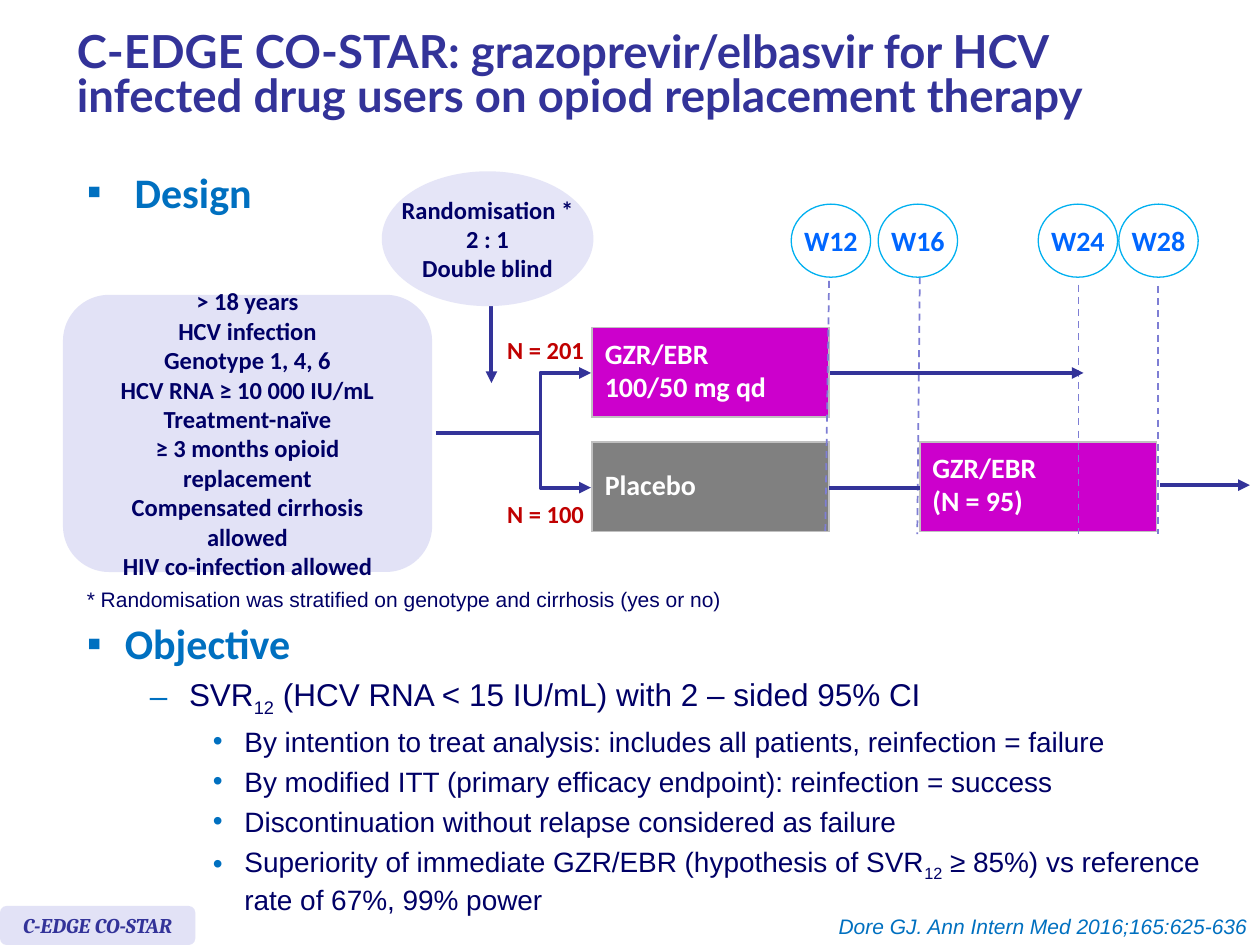
"""Build the C-EDGE CO-STAR study design slide."""
from pptx import Presentation
from pptx.dml.color import RGBColor
from pptx.enum import dml, shapes, text
from pptx.oxml import parse_xml
from pptx.oxml.ns import nsdecls
from pptx.util import Inches, Pt

NAVY = RGBColor(0x00, 0x00, 0x66)
INDIGO = RGBColor(0x33, 0x33, 0x99)
BLUE = RGBColor(0x00, 0x70, 0xC0)
BRIGHT = RGBColor(0x00, 0x66, 0xFF)
CYAN = RGBColor(0x00, 0xB0, 0xF0)
DASH = RGBColor(0x7E, 0x7E, 0xD4)
PALE = RGBColor(0xE2, 0xE2, 0xF6)
MIST = RGBColor(0xE5, 0xE5, 0xF7)
RED = RGBColor(0xC0, 0x00, 0x00)
PINK = RGBColor(0xCC, 0x00, 0xCC)
GREY = RGBColor(0x80, 0x80, 0x80)
WHITE = RGBColor(0xFF, 0xFF, 0xFF)
LEFT, MID, RIGHT = text.PP_ALIGN.LEFT, text.PP_ALIGN.CENTER, text.PP_ALIGN.RIGHT
OVAL, ROUND = shapes.MSO_SHAPE.OVAL, shapes.MSO_SHAPE.ROUNDED_RECTANGLE


def write(frame, words, face, size, color, align=MID, bold=True, slant=False):
    """Fill a text frame and format every paragraph alike."""
    frame.text = words
    for para in frame.paragraphs:
        para.alignment = align
        for run in para.runs:
            font = run.font
            font.name, font.size, font.bold, font.italic = face, Pt(size), bold, slant
            font.color.rgb = color


def style(item, color, width, ends=()):
    """Colour a line and add triangles at the named ends."""
    item.line.color.rgb = color
    item.line.width = Pt(width)
    for end in ends:
        item.line._get_or_add_ln().append(
            parse_xml(f'<a:{end} {nsdecls("a")} type="triangle"/>'))


deck = Presentation()
deck.slide_width, deck.slide_height = Inches(10), Inches(7.5)
slide = deck.slides.add_slide(deck.slide_layouts[1])
pool = slide.shapes
title, body = pool.title, slide.placeholders[1]

title.left, title.top, title.width, title.height = map(Inches, (0.51, 0.08, 9.13, 1.07))
write(title.text_frame, "C-EDGE CO-STAR: grazoprevir/elbasvir for HCV infected drug users "
      "on opiod replacement therapy", "Lato", 26, INDIGO, LEFT)
title.text_frame.paragraphs[0].line_spacing = Pt(25)
title.text_frame.vertical_anchor = text.MSO_ANCHOR.MIDDLE
title.text_frame.auto_size = text.MSO_AUTO_SIZE.NONE

ARMS = [
    (4.7, 2.6, "GZR/EBR\n100/50 mg qd", PINK),
    (4.7, 3.51, "Placebo", GREY),
    (7.3, 3.51, "GZR/EBR\n(N = 95)", PINK),
]
for x, y, words, color in ARMS:
    table = pool.add_table(1, 1, Inches(x), Inches(y), Inches(1.88), Inches(0.71)).table
    cell = table.cell(0, 0)
    write(cell.text_frame, words, "Calibri", 16, WHITE, LEFT)
    cell.vertical_anchor = text.MSO_ANCHOR.MIDDLE
    for i, para in enumerate(cell.text_frame.paragraphs):
        para.line_spacing = 0.8
        para.space_before = Pt(3.2 if i else 0)
    for side in "LRTB":
        cell._tc.get_or_add_tcPr().append(parse_xml(
            f'<a:ln{side} {nsdecls("a")} w="12700"><a:solidFill>'
            f'<a:srgbClr val="C0C0C0"/></a:solidFill></a:ln{side}>'))
    cell.fill.solid()
    cell.fill.fore_color.rgb = color

LINES = [
    (6.58, 2.23, 6.55, 4.22, "dash"),
    (7.3, 2.2, 7.28, 4.24, "dash"),
    (8.56, 2.26, 8.56, 4.24, "dash"),
    (9.19, 2.27, 9.19, 4.24, "dash"),
    (6.59, 2.96, 8.6, 2.96, "arrow"),
    (9.21, 3.85, 9.92, 3.85, "arrow"),
    (3.9, 2.42, 3.9, 3.04, "arrow"),
    (6.58, 3.87, 7.3, 3.87, "plain"),
    (3.46, 3.44, 4.29, 3.44, "plain"),
]
for *ends, kind in LINES:
    line = pool.add_connector(shapes.MSO_CONNECTOR.STRAIGHT, *map(Inches, ends))
    if kind == "dash":
        style(line, DASH, 1)
        line.line.dash_style = dml.MSO_LINE.DASH
    else:
        style(line, INDIGO, 2.25, ["tailEnd"] if kind == "arrow" else [])
    line._element.spPr.append(parse_xml(f'<a:effectLst {nsdecls("a")}/>'))

pen = pool.build_freeform(Inches(4.69), Inches(2.96))
pen.add_line_segments([(Inches(x), Inches(y)) for x, y in
                       ((4.29, 2.96), (4.29, 3.87), (4.69, 3.87))], close=False)
fork = pen.convert_to_shape()
fork.shadow.inherit = False
fork.fill.background()
style(fork, INDIGO, 2.25, ["headEnd", "tailEnd"])

WHO = """> 18 years
HCV infection
Genotype 1, 4, 6
HCV RNA ≥ 10 000 IU/mL
Treatment-naïve
≥\u00a03 months opioid replacement
Compensated cirrhosis allowed
HIV co-infection allowed""".replace("\u00a0", " ")
NODES = [
    (ROUND, (0.5, 2.34, 2.93, 2.2), PALE, WHO, "Calibri", 14, NAVY),
    (OVAL, (3.03, 1.36, 1.68, 1.07), MIST, "Randomisation *\n2 : 1\nDouble blind",
     "Calibri", 14, NAVY),
    (ROUND, (0, 7.19, 1.55, 0.31), PALE, "C-EDGE CO-STAR", "Cambria", 12, INDIGO),
]
for x, week in ((6.28, "W12"), (6.97, "W16"), (8.24, "W24"), (8.88, "W28")):
    NODES.append((OVAL, (x, 1.62, 0.63, 0.58), WHITE, week, "Calibri", 16, BRIGHT))
for kind, spot, color, words, face, size, ink in NODES:
    node = pool.add_shape(kind, *map(Inches, spot))
    node.shadow.inherit = False
    node.fill.solid()
    node.fill.fore_color.rgb = color
    if color == WHITE:
        style(node, CYAN, 0.75)
    else:
        node.line.fill.background()
    frame = node.text_frame
    write(frame, words, face, size, ink, slant=face == "Cambria")
    frame.vertical_anchor = text.MSO_ANCHOR.MIDDLE
    frame.word_wrap = words == WHO
    if words == WHO:
        frame.margin_left = frame.margin_right = Inches(0.15)

NOTES = [
    ((3.92, 2.61, 0.82, 0.34), "N = 201", "Calibri", 14, RED, MID, True, False),
    ((3.92, 3.91, 0.82, 0.34), "N = 100", "Calibri", 14, RED, MID, True, False),
    ((0.59, 4.61, 5.28, 0.3), "* Randomisation was stratified on genotype and cirrhosis "
     "(yes or no)", "Arial", 12, NAVY, LEFT, False, False),
    ((6.53, 7.2, 3.47, 0.3), "Dore GJ. Ann Intern Med 2016;165:625-636",
     "Arial", 12, BLUE, RIGHT, False, True),
]
for spot, *look in NOTES:
    note = pool.add_textbox(*map(Inches, spot))
    write(note.text_frame, *look)
    note.text_frame.word_wrap = False

design = pool.add_textbox(*map(Inches, (0.59, 1.27, 1.98, 0.63)))
body.left, body.top, body.width, body.height = map(Inches, (0.59, 4.85, 9.33, 2.07))
GOALS = [
    (0, "Objective"),
    (1, "SVR|12| (HCV RNA < 15 IU/mL) with 2 – sided 95% CI"),
    (2, "By intention to treat analysis: includes all patients, reinfection = failure"),
    (2, "By modified ITT (primary efficacy endpoint): reinfection = success"),
    (2, "Discontinuation without relapse considered as failure"),
    (2, "Superiority of immediate GZR/EBR (hypothesis of SVR|12| ≥ 85%) "
        "vs reference rate of 67%, 99% power"),
]
RANKS = [("▪", 0.3, 0.3, "Calibri", 24, BLUE), ("–", 0.81, 0.31, "Arial", 18, NAVY),
         ("•", 1.25, 0.25, "Arial", 16, NAVY)]
for box, items, hang in ((design, [(0, "Design")], 0.38), (body, GOALS, 0.3)):
    frame = box.text_frame
    frame.word_wrap = True
    frame.auto_size = text.MSO_AUTO_SIZE.NONE
    for i, (rank, words) in enumerate(items):
        para = frame.add_paragraph() if i else frame.paragraphs[0]
        mark, left, back, face, size, color = RANKS[rank]
        if rank == 0:
            left = back = hang
        para.level = rank
        props = para._p.get_or_add_pPr()
        props.set("marL", str(Inches(left)))
        props.set("indent", str(-Inches(back)))
        for tag in ('buClr><a:srgbClr val="0070C0"/></a:buClr', 'buFont typeface="Arial"/',
                    f'buChar char="{mark}"/'):
            props.append(parse_xml(f"<a:{tag}>".replace(
                tag[:6], f"{tag[:6]} {nsdecls('a')}", 1) if tag.startswith("buFont")
                or tag.startswith("buChar") else
                f"<a:{tag}>".replace("buClr>", f"buClr {nsdecls('a')}>", 1)))
        para.space_before = Pt(size * 0.23 if i else 0)
        for j, part in enumerate(words.split("|")):
            run = para.add_run()
            run.text = part
            font = run.font
            font.name, font.size, font.bold = face, Pt(size), rank == 0
            font.color.rgb = color
            if j % 2:
                font._element.set("baseline", "-25000")

deck.save("out.pptx")
